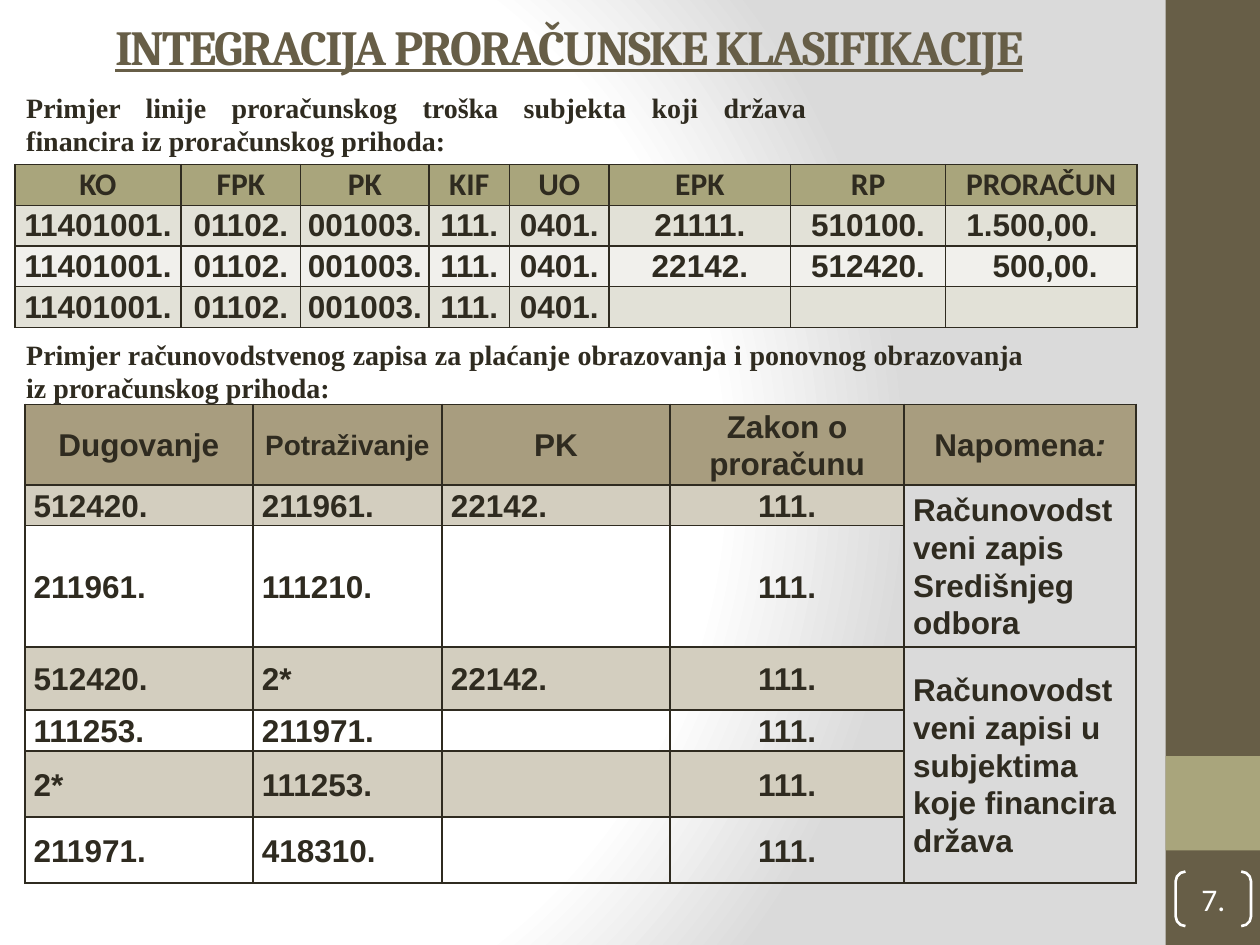
from lxml import etree
from pptx import Presentation
from pptx import util as u
from pptx.dml.color import RGBColor
from pptx.enum import shapes, text
from pptx.oxml import parse_xml
from pptx.oxml.ns import qn

Cm = u.Cm
INK = {"dark": "2F2B20", "brown": "675E47", "olive": "A9A57C", "tan": "A89D7F",
       "sand": "D3CEBF", "mist": "E2E1D7", "pale": "F1F0EC",
       "white": "FFFFFF", "grey": "DADADA"}
SIDE = {"left": text.PP_ALIGN.LEFT, "mid": text.PP_ALIGN.CENTER,
        "right": text.PP_ALIGN.RIGHT, "just": text.PP_ALIGN.JUSTIFY}
NS = "http://schemas.openxmlformats.org/drawingml/2006/main"

COSTS = [
    ["KO", "FPK", "PK", "KIF", "UO", "EPK", "RP", "PRORAČUN"],
    ["11401001.", "01102.", "001003.", "111.", "0401.", "21111.", "510100.", "1.500,00."],
    ["11401001.", "01102.", "001003.", "111.", "0401.", "22142.", "512420.", "500,00."],
    ["11401001.", "01102.", "001003.", "111.", "0401.", "", "", ""],
]
LEDGER = [
    ["Dugovanje", "Potraživanje", "PK", "Zakon o proračunu", "Napomena"],
    ["512420.", "211961.", "22142.", "111.", "Računovodstveni zapis Središnjeg odbora"],
    ["211961.", "111210.", "", "111.", ""],
    ["512420.", "2*", "22142.", "111.",
     "Računovodstveni zapisi u subjektima koje financira država"],
    ["111253.", "211971.", "", "111.", ""],
    ["2*", "111253.", "", "111.", ""],
    ["211971.", "418310.", "", "111.", ""],
]


def tint(name):
    return RGBColor.from_string(INK[name])


def write(frame, words, font="Arial", size=18, color="dark", bold=True, align="left",
          line=None, under=False, track=0, tail="", pad=None):
    frame.word_wrap = True
    if pad is not None:
        frame.margin_left = frame.margin_right = Cm(pad)
        frame.margin_top = frame.margin_bottom = 0
    para = frame.paragraphs[0]
    para.alignment = SIDE[align]
    if line:
        para.line_spacing = line
    for part, slant in ((words, False), (tail, True)):
        if not part:
            continue
        run = para.add_run()
        run.text = part
        face = run.font
        face.name, face.size, face.bold = font, u.Pt(size), bold
        face.italic, face.underline = slant, under
        face.color.rgb = tint(color)
        if track:
            run._r.get_or_add_rPr().set("spc", str(track * 100))


def block(slide, kind, box, fill=None):
    shape = slide.shapes.add_shape(kind, *map(Cm, box))
    shape.shadow.inherit = False
    shape.line.fill.background()
    if fill:
        shape.fill.solid()
        shape.fill.fore_color.rgb = tint(fill)
    else:
        shape.fill.background()
    return shape


def paint(slide):
    slide.background.fill.gradient()
    old = slide.background._cSld.find(".//" + qn("a:gradFill"))
    stops = "".join(f'<a:gs pos="{pos}000"><a:srgbClr val="{INK[name]}"/></a:gs>'
                    for pos, name in ((0, "white"), (75, "white"), (100, "grey")))
    new = parse_xml(f'<a:gradFill xmlns:a="{NS}" rotWithShape="1"><a:gsLst>{stops}</a:gsLst>'
                    '<a:path path="circle"><a:fillToRect l="20000" t="50000" r="100000"'
                    ' b="50000"/></a:path></a:gradFill>')
    old.getparent().replace(old, new)


def band(slide, left, top, width, height):
    rect = shapes.MSO_SHAPE.RECTANGLE
    block(slide, rect, (left, top, width, height), "brown")
    block(slide, rect, (left, top + 0.8 * height, width, 0.1 * height), "olive")
    mark = block(slide, shapes.MSO_SHAPE.DOUBLE_BRACKET,
                 (left + 0.2, top + height - 1.48, width - 0.38, 1.1))
    mark.adjustments[0] = 0.18
    mark.line.color.rgb = tint("white")
    mark.line.width = u.Pt(1.5)
    mark.text_frame.vertical_anchor = text.MSO_ANCHOR.MIDDLE
    write(mark.text_frame, "7.", font="Calibri", color="white", bold=False,
          align="mid", pad=0)


def head(slide, left, top, width, height):
    title = slide.shapes.title
    title.left, title.top, title.width, title.height = map(Cm, (left, top, width, height))
    title.text_frame.auto_size = text.MSO_AUTO_SIZE.NONE
    title.text_frame.vertical_anchor = text.MSO_ANCHOR.MIDDLE
    write(title.text_frame, "INTEGRACIJA PRORAČUNSKE KLASIFIKACIJE", font="Cambria",
          size=28, color="brown", align="mid", under=True, track=-1)


def note(slide, words, *box):
    frame = slide.shapes.add_textbox(*map(Cm, box)).text_frame
    frame.vertical_anchor = text.MSO_ANCHOR.MIDDLE
    write(frame, words, font="Times New Roman", size=16, align="just")


def edge(cell):
    props = cell._tc.get_or_add_tcPr()
    for side in ("lnL", "lnR", "lnT", "lnB"):
        line = etree.SubElement(props, qn("a:" + side), w="12700")
        fill = etree.SubElement(line, qn("a:solidFill"))
        etree.SubElement(fill, qn("a:srgbClr"), val=INK["dark"])


def grid(slide, left, top, wide, tall, pad, shade):
    table = slide.shapes.add_table(len(tall), len(wide), Cm(left), Cm(top),
                                   Cm(sum(wide)), Cm(sum(tall))).table
    table.first_row = table.horz_banding = False
    for col, size in zip(table.columns, wide):
        col.width = Cm(size)
    for y, size in enumerate(tall):
        table.rows[y].height = Cm(size)
        for x in range(len(wide)):
            cell = table.cell(y, x)
            edge(cell)
            cell.vertical_anchor = text.MSO_ANCHOR.MIDDLE
            cell.margin_left = cell.margin_right = Cm(pad)
            cell.margin_top = cell.margin_bottom = 0
            name = shade(y, x)
            if name:
                cell.fill.solid()
                cell.fill.fore_color.rgb = tint(name)
            else:
                cell.fill.background()
    return table


def costs(slide, left, top):
    wide = [3.35, 2.41, 2.59, 1.62, 2.01, 3.66, 3.12, 3.86]
    table = grid(slide, left, top, wide, [0.82] * 4, 0.03,
                 lambda y, x: ("olive", "mist", "pale", "mist")[y])
    for y, row in enumerate(COSTS):
        for x, words in enumerate(row):
            cell = table.cell(y, x)
            money = y > 0 and x == len(row) - 1
            if money:
                cell.margin_right = Cm(0.79)
            write(cell.text_frame, words, font="Arial" if y else "Calibri",
                  align="right" if money else "mid")


def ledger(slide, left, top):
    last = len(LEDGER[0]) - 1

    def shade(y, x):
        if y == 0:
            return "tan"
        return "sand" if y in (1, 3, 5) and x < last else None

    table = grid(slide, left, top, [4.6, 3.81, 4.6, 4.72, 4.67],
                 [1.53, 0.75, 2.28, 1.27, 0.83, 1.33, 1.33], 0.18, shade)
    for start, end in ((1, 2), (3, 6)):
        table.cell(start, last).merge(table.cell(end, last))
    for y, row in enumerate(LEDGER):
        for x, words in enumerate(row):
            write(table.cell(y, x).text_frame, words, line=1.07,
                  size=16 if (y, x) == (0, 1) else 18,
                  align="mid" if y == 0 or x == 3 else "left",
                  tail=":" if (y, x) == (0, last) else "")


def main():
    deck = Presentation()
    deck.slide_width, deck.slide_height = Cm(25.4), Cm(19.05)
    slide = deck.slides.add_slide(deck.slide_layouts[5])
    paint(slide)
    band(slide, 23.5, 0, 1.9, 19.05)
    head(slide, 0.5, 0.15, 21.95, 1.55)
    note(slide, "Primjer linije proračunskog troška subjekta koji država "
         "financira iz proračunskog prihoda:", 0.28, 1.7, 16.23, 1.6)
    costs(slide, 0.3, 3.32)
    note(slide, "Primjer računovodstvenog zapisa za plaćanje obrazovanja i ponovnog "
         "obrazovanja iz proračunskog prihoda:", 0.28, 6.68, 20.6, 1.6)
    ledger(slide, 0.5, 8.15)
    deck.save("out.pptx")


if __name__ == "__main__":
    main()
